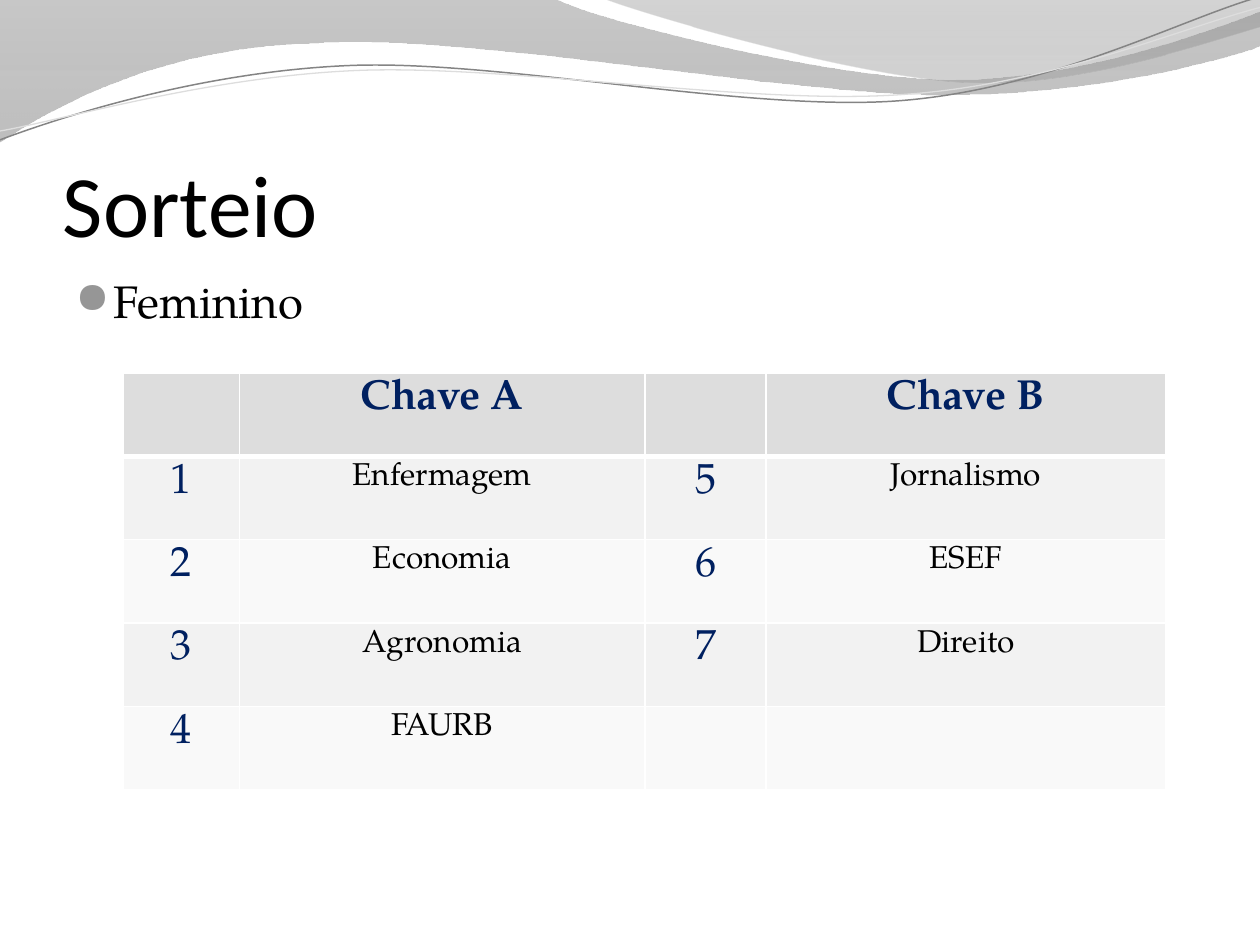
import math

import lxml.etree
import pptx
import pptx.dml.color
import pptx.enum.text
import pptx.oxml
import pptx.oxml.ns
import pptx.util

Inches = pptx.util.Inches
Pt = pptx.util.Pt
RGBColor = pptx.dml.color.RGBColor
qn = pptx.oxml.ns.qn

BLACK = RGBColor(0x00, 0x00, 0x00)
WHITE = RGBColor(0xFF, 0xFF, 0xFF)
NAVY = RGBColor(0x00, 0x20, 0x60)
BULLET_GRAY = RGBColor(0x96, 0x96, 0x96)
DARK_GRAY = RGBColor(0x84, 0x84, 0x84)
MID_GRAY = RGBColor(0x88, 0x88, 0x88)
DEEP_GRAY = RGBColor(0x6F, 0x6F, 0x6F)
SOFT_GRAY = RGBColor(0x9D, 0x9D, 0x9D)
HEADER_FILL = RGBColor(0xDD, 0xDD, 0xDD)
BAND_FILLS = [RGBColor(0xF2, 0xF2, 0xF2), RGBColor(0xF9, 0xF9, 0xF9)]

TITLE_FONT = "Calibri"
BODY_FONT = "TeX Gyre Pagella"
BULLET_FONT = "OpenSymbol"
CURVE_TILT = 2.7

LOWER_WAVE = [
    (0, 0), (4.4, -0.01),
    (4.76, 0.17, 6.64, 0.63, 7.58, 0.63), (8.53, 0.63, 9.58, 0.26, 10, 0.09),
    (10.01, 0.36),
    (9.83, 0.44, 8.7, 0.76, 7.46, 0.75), (6.22, 0.75, 3.82, 0.28, 2.57, 0.34),
    (1.29, 0.36, 0.46, 0.83, -0.01, 1.13),
]
UPPER_WAVE = [
    (4.79, -0.01),
    (5.09, 0.11, 6.82, 0.62, 7.69, 0.65), (8.56, 0.69, 9.61, 0.32, 10, 0.21),
    (10, 0),
]
DARK_CURVE = [
    (0, 1.11),
    (0.48, 0.93, 1.58, 0.57, 2.77, 0.52), (3.95, 0.47, 5.93, 0.89, 7.13, 0.8),
    (8.33, 0.71, 9.38, 0.15, 9.98, -0.02),
]
LIGHT_CURVE = [
    (0, 1.04),
    (0.47, 0.96, 1.64, 0.61, 2.83, 0.56), (4.03, 0.51, 5.97, 0.84, 7.17, 0.75),
    (8.36, 0.67, 9.41, 0.21, 10, 0.06),
]
DRAW_ROWS = [
    ("", "Chave A", "", "Chave B"),
    ("1", "Enfermagem", "5", "Jornalismo"),
    ("2", "Economia", "6", "ESEF"),
    ("3", "Agronomia", "7", "Direito"),
    ("4", "FAURB", "", ""),
]
COLUMN_WIDTHS = [0.92, 3.22, 0.96, 3.17]
TABLE_HEIGHT = 3.31


def segment_points(segment):
    return list(zip(segment[::2], segment[1::2]))


def turn_segments(segments, center, degrees):
    cosine, sine = math.cos(math.radians(degrees)), math.sin(math.radians(degrees))
    turned = []
    for segment in segments:
        offsets = [(x - center[0], y - center[1]) for x, y in segment_points(segment)]
        turned.append(tuple(
            value for x, y in offsets
            for value in (center[0] + x * cosine - y * sine, center[1] + x * sine + y * cosine)
        ))
    return turned


def add_outline(slide, segments, close):
    points = [
        (Inches(x), Inches(y)) for segment in segments for x, y in segment_points(segment)
    ]
    builder = slide.shapes.build_freeform(*points[0])
    builder.add_line_segments(points[1:], close=close)
    shape = builder.convert_to_shape()
    shape.shadow.inherit = False
    lines = shape.element.spPr.findall(".//" + qn("a:lnTo"))
    for segment in segments[1:]:
        count = len(segment) // 2
        parts, lines = lines[:count], lines[count:]
        if count == 3:
            curve = lxml.etree.Element(qn("a:cubicBezTo"))
            parts[0].addprevious(curve)
            for part in parts:
                curve.append(part[0])
                part.getparent().remove(part)
    return shape


def add_wave(slide, segments, stops):
    wave = add_outline(slide, segments, True)
    wave.line.fill.background()
    wave.fill.gradient()
    wave.fill.gradient_angle = 270
    stop_list = wave.element.spPr.find(qn("a:gradFill")).find(qn("a:gsLst"))
    for stop in list(stop_list):
        stop_list.remove(stop)
    for position, color, opacity in stops:
        stop = lxml.etree.SubElement(stop_list, qn("a:gs"), pos=str(position * 1000))
        shade = lxml.etree.SubElement(stop, qn("a:srgbClr"), val=str(color))
        lxml.etree.SubElement(shade, qn("a:alpha"), val=str(opacity * 1000))


def add_curve(slide, segments, center, color, width):
    curve = add_outline(slide, turn_segments(segments, center, CURVE_TILT), False)
    curve.rotation = 360 - CURVE_TILT
    curve.fill.background()
    curve.line.color.rgb = color
    curve.line.width = Pt(width)


def add_run(para, text, font, size, color, bold=False):
    run = para.add_run()
    run.text = text
    run.font.name = font
    run.font.size = Pt(size)
    run.font.bold = bold
    run.font.color.rgb = color


def add_text_box(slide, left, top, width, height):
    box = slide.shapes.add_textbox(Inches(left), Inches(top), Inches(width), Inches(height))
    box.text_frame.word_wrap = True
    return box.text_frame


def add_title(slide, text):
    frame = add_text_box(slide, 0.5, 0.77, 9, 1.25)
    frame.vertical_anchor = pptx.enum.text.MSO_ANCHOR.BOTTOM
    frame.margin_left = frame.margin_right = frame.margin_bottom = 0
    add_run(frame.paragraphs[0], text, TITLE_FONT, 50, BLACK)


def add_bullet(slide, text):
    para = add_text_box(slide, 0.5, 2.12, 9, 4.8).paragraphs[0]
    para.space_before = Pt(5.2)
    add_run(para, text, BODY_FONT, 26, BLACK)
    properties = para._p.get_or_add_pPr()
    properties.set("marL", str(Inches(0.3)))
    properties.set("indent", str(-Inches(0.3)))
    bullet_color = lxml.etree.SubElement(properties, qn("a:buClr"))
    lxml.etree.SubElement(bullet_color, qn("a:srgbClr"), val=str(BULLET_GRAY))
    lxml.etree.SubElement(properties, qn("a:buSzPct"), val="95000")
    lxml.etree.SubElement(properties, qn("a:buFont"), typeface=BULLET_FONT)
    lxml.etree.SubElement(properties, qn("a:buChar"), char="●")


def set_borders(cell, row_index):
    properties = cell._tc.get_or_add_tcPr()
    widths = {"L": 1, "R": 1, "T": 3 if row_index == 1 else 1, "B": 3 if row_index == 0 else 1}
    for side, width in widths.items():
        border = lxml.etree.SubElement(properties, qn("a:ln" + side), w=str(Pt(width)))
        fill = lxml.etree.SubElement(border, qn("a:solidFill"))
        lxml.etree.SubElement(fill, qn("a:srgbClr"), val=str(WHITE))


def fill_cell(cell, text, row_index, column_index):
    is_header = row_index == 0
    is_label = is_header or column_index % 2 == 0
    set_borders(cell, row_index)
    cell.fill.solid()
    cell.fill.fore_color.rgb = HEADER_FILL if is_header else BAND_FILLS[(row_index - 1) % 2]
    if text:
        para = cell.text_frame.paragraphs[0]
        para.alignment = pptx.enum.text.PP_ALIGN.CENTER
        size, color = (24, NAVY) if is_label else (18, BLACK)
        add_run(para, text, BODY_FONT, size, color, is_header)


def add_draw_table(slide):
    table = slide.shapes.add_table(
        len(DRAW_ROWS), len(COLUMN_WIDTHS), Inches(0.98), Inches(2.96),
        Inches(sum(COLUMN_WIDTHS)), Inches(TABLE_HEIGHT),
    ).table
    for column, width in zip(table.columns, COLUMN_WIDTHS):
        column.width = Inches(width)
    for row_index, texts in enumerate(DRAW_ROWS):
        for column_index, text in enumerate(texts):
            fill_cell(table.cell(row_index, column_index), text, row_index, column_index)


def main():
    deck = pptx.Presentation()
    deck.slide_width = Inches(10)
    deck.slide_height = Inches(7.5)
    slide = deck.slides.add_slide(deck.slide_layouts[6])
    add_wave(slide, LOWER_WAVE, [(0, DARK_GRAY, 45), (100, MID_GRAY, 55)])
    add_wave(slide, UPPER_WAVE, [(0, DEEP_GRAY, 30), (80, SOFT_GRAY, 45)])
    add_curve(slide, DARK_CURVE, (4.99, 0.58), DARK_GRAY, 0.85)
    add_curve(slide, LIGHT_CURVE, (5, 0.59), HEADER_FILL, 0.75)
    add_title(slide, "Sorteio")
    add_bullet(slide, "Feminino")
    add_draw_table(slide)
    deck.save("out.pptx")


if __name__ == "__main__":
    main()
